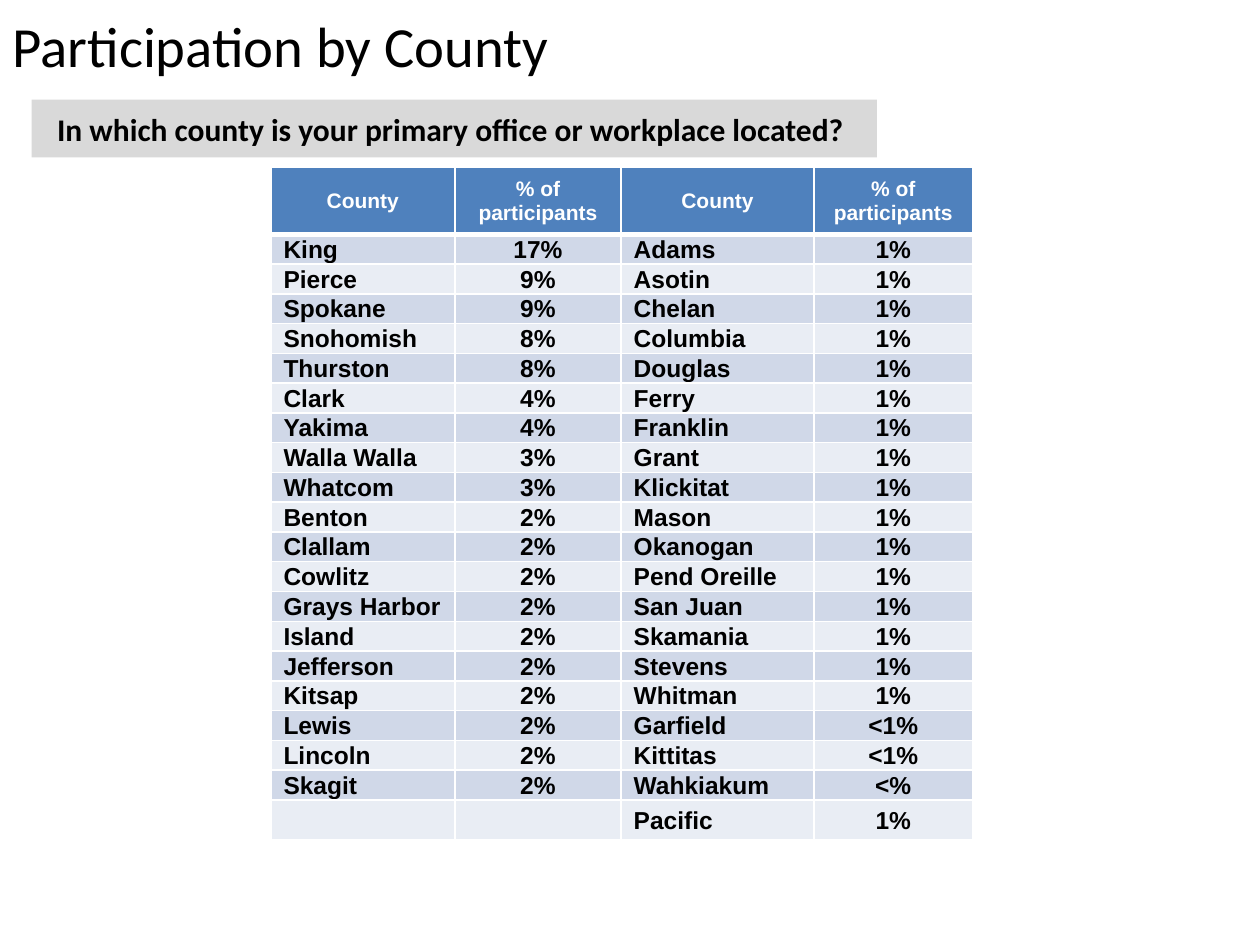
"""Build the county participation slide with its two-part table."""
from typing import NamedTuple

from lxml.etree import SubElement
from pptx import Presentation
from pptx.dml.color import RGBColor as RGB
from pptx.enum.shapes import MSO_SHAPE as SHAPE
from pptx.enum.text import MSO_ANCHOR as ANCHOR, MSO_AUTO_SIZE as AUTO, PP_ALIGN as ALIGN
from pptx.oxml import parse_xml
from pptx.oxml.ns import nsdecls, qn
from pptx.util import Inches, Pt

COLORS = {"text": "000000", "light": "FFFFFF", "header": "4F81BD",
          "odd": "D0D8E8", "even": "E9EDF4", "banner": "D9D9D9"}
TITLE_FONT = {"name": "Calibri", "size": Pt(32.4), "bold": False}
BANNER_FONT = {"name": "Calibri", "size": Pt(18), "bold": True}
HEADER_FONT = {"name": "Arial", "size": Pt(12), "bold": True}
BODY_FONT = {"name": "Arial", "size": Pt(14), "bold": True}
NAME_MARGINS = {"margin_left": Inches(0.1), "margin_top": Inches(0.01),
                "margin_right": Inches(0.01), "margin_bottom": 0}
SHARE_MARGINS = {**NAME_MARGINS, "margin_left": Inches(0.01)}

COL_WIDTHS = (1.46, 1.32, 1.53, 1.26)
TABLE_LEFT, TABLE_TOP, TABLE_HEIGHT = 2.15, 1.33, 5.34
HEADER_HEIGHT, LAST_HEIGHT = 0.53, 0.32


class County(NamedTuple):
    name: str
    share: str


LEFT = [County(*c) for c in (
    ("King", "17%"), ("Pierce", "9%"), ("Spokane", "9%"), ("Snohomish", "8%"),
    ("Thurston", "8%"), ("Clark", "4%"), ("Yakima", "4%"), ("Walla Walla", "3%"),
    ("Whatcom", "3%"), ("Benton", "2%"), ("Clallam", "2%"), ("Cowlitz", "2%"),
    ("Grays Harbor", "2%"), ("Island", "2%"), ("Jefferson", "2%"), ("Kitsap", "2%"),
    ("Lewis", "2%"), ("Lincoln", "2%"), ("Skagit", "2%"), ("", ""))]
RIGHT = [County(*c) for c in (
    ("Adams", "1%"), ("Asotin", "1%"), ("Chelan", "1%"), ("Columbia", "1%"),
    ("Douglas", "1%"), ("Ferry", "1%"), ("Franklin", "1%"), ("Grant", "1%"),
    ("Klickitat", "1%"), ("Mason", "1%"), ("Okanogan", "1%"), ("Pend Oreille", "1%"),
    ("San Juan", "1%"), ("Skamania", "1%"), ("Stevens", "1%"), ("Whitman", "1%"),
    ("Garfield", "<1%"), ("Kittitas", "<1%"), ("Wahkiakum", "<%"), ("Pacific", "1%"))]


def apply(target, values: dict) -> None:
    for key, value in values.items():
        setattr(target, key, value)


def write(tf, text: str, font: dict, color: str, align) -> None:
    p = tf.paragraphs[0]
    p.alignment = align
    if text:
        r = p.add_run()
        r.text = text
        apply(r.font, font)
        r.font.color.rgb = RGB.from_string(COLORS[color])


def set_borders(cell, top: float, bottom: float) -> None:
    tc_pr = cell._tc.get_or_add_tcPr()
    widths = {"lnL": 1, "lnR": 1, "lnT": top, "lnB": bottom}
    for i, (tag, width) in enumerate(widths.items()):
        ln = parse_xml(f'<a:{tag} {nsdecls("a")} w="{Pt(width)}"/>')
        fill = SubElement(ln, qn("a:solidFill"))
        SubElement(fill, qn("a:srgbClr"), val=COLORS["light"])
        tc_pr.insert(i, ln)


def fill_cell(cell, row: int, col: int, text: str) -> None:
    header, name = row == 0, col % 2 == 0
    cell.vertical_anchor = ANCHOR.MIDDLE
    cell.fill.solid()
    band = "header" if header else "odd" if row % 2 else "even"
    cell.fill.fore_color.rgb = RGB.from_string(COLORS[band])
    set_borders(cell, 3 if row == 1 else 1, 3 if header else 1)
    if header:
        write(cell.text_frame, text, HEADER_FONT, "light", ALIGN.CENTER)
    else:
        apply(cell, NAME_MARGINS if name else SHARE_MARGINS)
        write(cell.text_frame, text, BODY_FONT, "text", ALIGN.LEFT if name else ALIGN.CENTER)


def add_title(s, text: str) -> None:
    sp = s.shapes.title
    apply(sp, {"left": Inches(0), "top": Inches(0.05),
               "width": Inches(6.58), "height": Inches(0.61)})
    apply(sp.text_frame, {"vertical_anchor": ANCHOR.MIDDLE, "auto_size": AUTO.NONE,
                          "word_wrap": True})
    write(sp.text_frame, text, TITLE_FONT, "text", ALIGN.LEFT)


def add_county_table(s) -> None:
    rows = [("County", "% of participants") * 2]
    rows += [(*a, *b) for a, b in zip(LEFT, RIGHT)]
    body_height = (TABLE_HEIGHT - HEADER_HEIGHT - LAST_HEIGHT) / (len(rows) - 2)
    heights = [HEADER_HEIGHT, *[body_height] * (len(rows) - 2), LAST_HEIGHT]
    table = s.shapes.add_table(len(rows), len(COL_WIDTHS), Inches(TABLE_LEFT), Inches(TABLE_TOP),
                               Inches(sum(COL_WIDTHS)), Inches(TABLE_HEIGHT)).table
    for column, width in zip(table.columns, COL_WIDTHS):
        column.width = Inches(width)
    for i, (values, height) in enumerate(zip(rows, heights)):
        table.rows[i].height = Inches(height)
        for j, text in enumerate(values):
            fill_cell(table.cell(i, j), i, j, text)


def add_banner(s, text: str) -> None:
    sp = s.shapes.add_shape(SHAPE.RECTANGLE, Inches(0.25), Inches(0.79),
                            Inches(6.71), Inches(0.46))
    sp.shadow.inherit = False
    sp.fill.solid()
    sp.fill.fore_color.rgb = RGB.from_string(COLORS["banner"])
    sp.line.fill.background()
    apply(sp.text_frame, {"vertical_anchor": ANCHOR.MIDDLE, "word_wrap": True})
    write(sp.text_frame, text, BANNER_FONT, "text", ALIGN.CENTER)


def main() -> None:
    prs = Presentation()
    prs.slide_width, prs.slide_height = Inches(10), Inches(7.5)
    s = prs.slides.add_slide(prs.slide_layouts[5])
    add_title(s, "Participation by County")
    add_county_table(s)
    add_banner(s, "In which county is your primary office or workplace located? ")
    prs.save("out.pptx")


if __name__ == "__main__":
    main()
